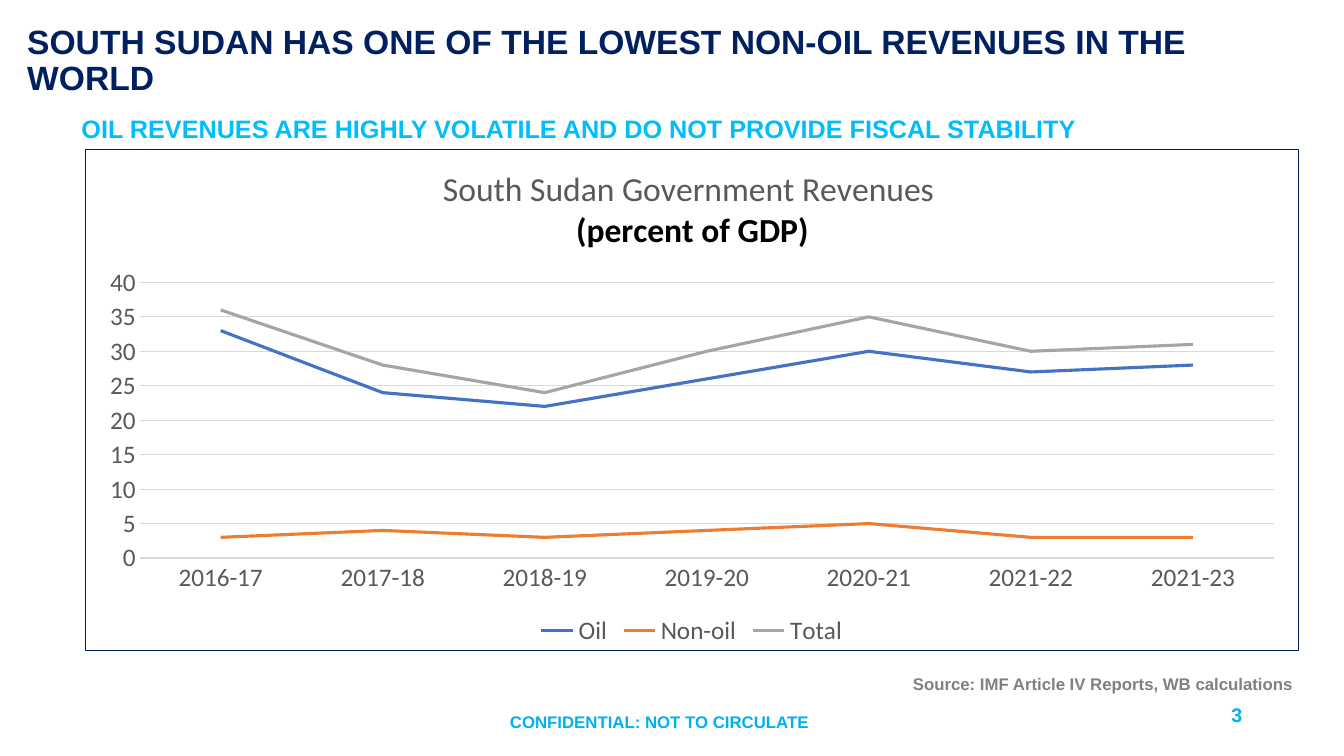
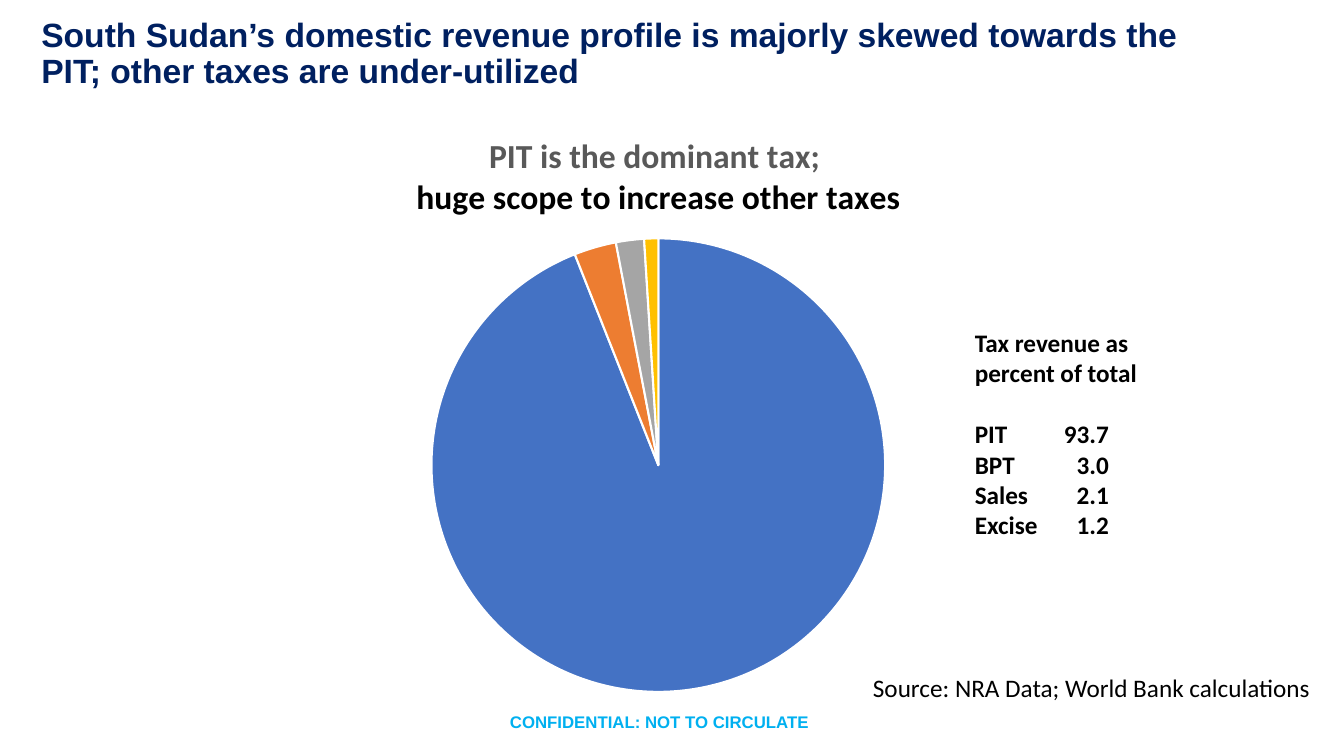
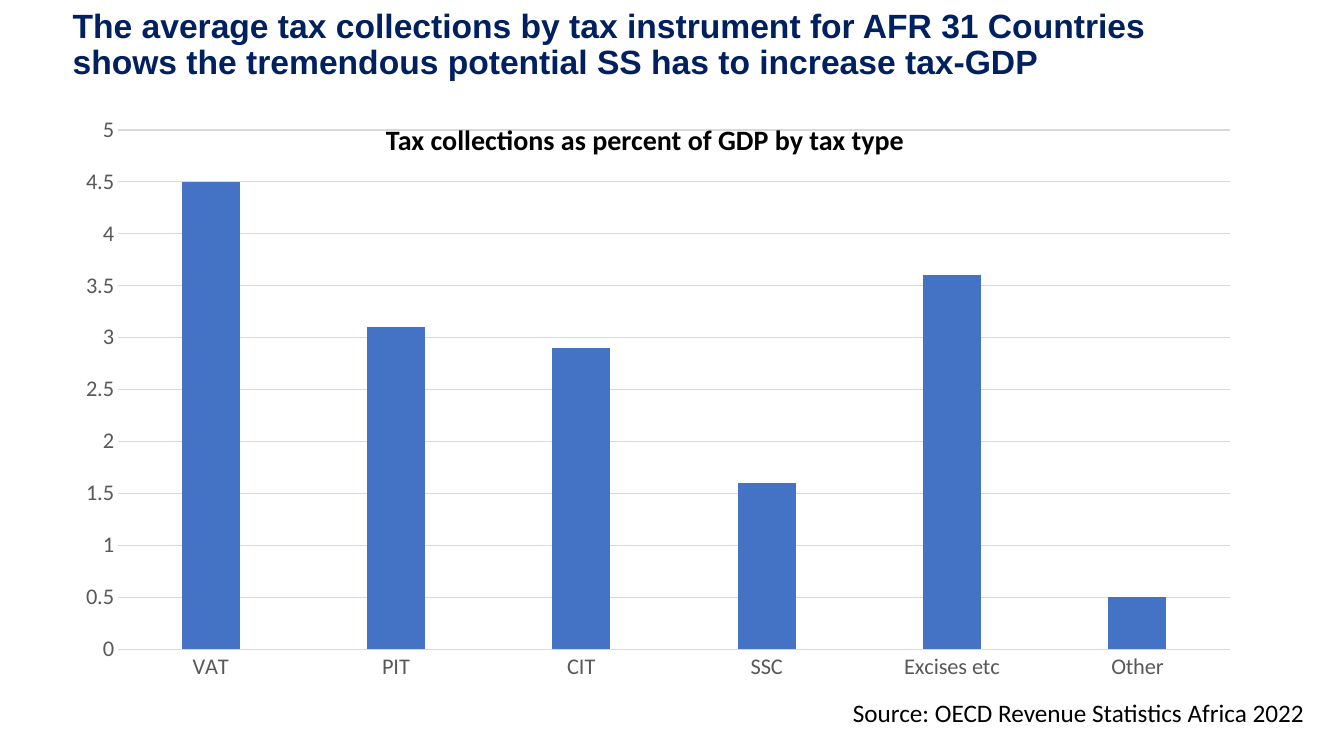
from pptx import Presentation
from pptx.chart.data import CategoryChartData
from pptx.dml.color import RGBColor
from pptx.enum.chart import XL_CHART_TYPE, XL_LEGEND_POSITION, XL_TICK_MARK
from pptx.enum.text import MSO_ANCHOR, MSO_AUTO_SIZE, PP_ALIGN
from pptx.oxml import parse_xml
from pptx.oxml.ns import nsdecls, qn
from pptx.util import Emu, Pt
from lxml.etree import SubElement

# Shared look: 100 px to the inch
EMU_PER_PX = 9144
SLIDE_SIZE = (1333, 750)
TITLE_ONLY = 5
NAVY, SKY, CYAN = "002060", "00BEFA", "00B0F0"
BLACK, WHITE, SOURCE_GREY = "000000", "FFFFFF", "808080"
AXIS_TEXT, GRID = "595959", "D9D9D9"
BLUE, ORANGE, GREY, GOLD = "4472C4", "ED7D31", "A5A5A5", "FFC000"
HEADING_FONT, BODY_FONT = "Arial", "Calibri"


def px(length):
    return Emu(length * EMU_PER_PX)


def rgb(color):
    return RGBColor.from_string(color)


def set_font(font, size, color, name=BODY_FONT, bold=False):
    font.size, font.name, font.bold = Pt(size), name, bold
    font.color.rgb = rgb(color)


# Text
def add_titled_slide(prs, title, box):
    slide = prs.slides.add_slide(prs.slide_layouts[TITLE_ONLY])
    heading = slide.shapes.title
    heading.left, heading.top, heading.width, heading.height = map(px, box)
    frame = heading.text_frame
    frame.text = title
    frame.auto_size = MSO_AUTO_SIZE.NONE
    frame.vertical_anchor = MSO_ANCHOR.MIDDLE
    paragraph = frame.paragraphs[0]
    paragraph.alignment, paragraph.line_spacing = PP_ALIGN.LEFT, 0.9
    set_font(paragraph.font, 24, NAVY, HEADING_FONT, True)
    return slide


def add_text(slide, text, box, size, color=BLACK, name=BODY_FONT, bold=False,
             align=PP_ALIGN.LEFT, spacing=None):
    frame = slide.shapes.add_textbox(*map(px, box)).text_frame
    frame.word_wrap = True
    paragraph = frame.paragraphs[0]
    paragraph.text = text
    paragraph.alignment, paragraph.line_spacing = align, spacing
    set_font(paragraph.font, size, color, name, bold)
    return frame


def add_confidential_footer(slide):
    add_text(slide, "CONFIDENTIAL: NOT TO CIRCULATE", (496, 701, 346, 30),
             12, CYAN, HEADING_FONT, True)


def add_figures(frame, rows, tab, size):
    """Label and right-aligned figure on each line, one line below the heading."""
    for number, (label, figure) in enumerate(rows):
        paragraph = frame.add_paragraph()
        paragraph.text = f"{label}\t{figure}"
        if number == 0:
            paragraph.space_before = Pt(22)
        tabs = SubElement(paragraph._p.get_or_add_pPr(), qn("a:tabLst"))
        SubElement(tabs, qn("a:tab"), pos=str(px(tab)), algn="r")
        set_font(paragraph.font, size, BLACK, bold=True)


# Charts
def set_layout(parent, index, chart_box, left, top, width=None, height=None):
    """Fix a chart part at slide coordinates given in px."""
    old = parent.find(qn("c:layout"))
    if old is not None:
        parent.remove(old)
    layout = parse_xml(f'<c:layout {nsdecls("c")}><c:manualLayout/></c:layout>')
    parent.insert(index, layout)
    x, y, w, h = chart_box
    values = {"xMode": "edge", "yMode": "edge",
              "x": round((left - x) / w, 4), "y": round((top - y) / h, 4)}
    if width:
        values = {"layoutTarget": "inner", **values,
                  "w": round(width / w, 4), "h": round(height / h, 4)}
    for tag, value in values.items():
        SubElement(layout[0], qn(f"c:{tag}"), val=str(value))


def add_chart(slide, kind, box, plot_box, categories, series, border=None):
    data = CategoryChartData()
    data.categories = categories
    for name, values in series.items():
        data.add_series(name, values)
    chart = slide.shapes.add_chart(kind, *map(px, box), data).chart
    set_font(chart.font, 10, BLACK)
    chart.has_title = chart.has_legend = False
    chart.plots[0].vary_by_categories = kind == XL_CHART_TYPE.PIE
    set_layout(chart.element.find(".//" + qn("c:plotArea")), 0, box, *plot_box)
    outline = (f'<a:solidFill><a:srgbClr val="{border}"/></a:solidFill>'
               if border else "<a:noFill/>")
    chart.element.find(qn("c:chart")).addnext(parse_xml(
        f'<c:spPr {nsdecls("c", "a")}><a:noFill/>'
        f'<a:ln w="9525">{outline}</a:ln></c:spPr>'))
    return chart


def add_chart_title(chart, box, corner, lines):
    """Each line is (text, color, bold)."""
    chart.has_title = True
    frame = chart.chart_title.text_frame
    for number, (text, color, bold) in enumerate(lines):
        paragraph = frame.add_paragraph() if number else frame.paragraphs[0]
        paragraph.text = text
        set_font(paragraph.font, 24, color, bold=bold)
    chart.chart_title.include_in_layout = False
    set_layout(chart.element.find(".//" + qn("c:title")), 1, box, *corner)


def style_axes(chart, size, maximum, step):
    for axis in (chart.category_axis, chart.value_axis):
        axis.major_tick_mark = axis.minor_tick_mark = XL_TICK_MARK.NONE
        set_font(axis.tick_labels.font, size, AXIS_TEXT)
    values = chart.value_axis
    values.minimum_scale, values.maximum_scale = 0, maximum
    values.major_unit = step
    values.format.line.fill.background()
    values.has_major_gridlines = True
    for rule in (chart.category_axis.format.line,
                 values.major_gridlines.format.line):
        rule.color.rgb, rule.width = rgb(GRID), Pt(0.75)


# Slides
def build_revenue_slide(prs):
    slide = add_titled_slide(
        prs, "SOUTH SUDAN HAS ONE OF THE LOWEST NON-OIL REVENUES IN THE WORLD",
        (17, 35, 1247, 52))
    add_text(slide, "OIL REVENUES ARE HIGHLY VOLATILE AND DO NOT PROVIDE "
             "FISCAL STABILITY", (71, 111, 1218, 37), 18, SKY, HEADING_FONT,
             True, spacing=0.9)
    add_confidential_footer(slide)
    add_text(slide, "3", (942, 695, 300, 31), 14.1, CYAN, HEADING_FONT, True,
             PP_ALIGN.RIGHT, 0.9)
    add_text(slide, "Source: IMF Article IV Reports, WB calculations",
             (855, 663, 478, 30), 12, SOURCE_GREY, HEADING_FONT, True,
             PP_ALIGN.CENTER)

    box = (84, 148, 1204, 498)
    years = ["2016-17", "2017-18", "2018-19", "2019-20", "2020-21",
             "2021-22", "2021-23"]
    revenues = {"Oil": (33, 24, 22, 26, 30, 27, 28),
                "Non-oil": (3, 4, 3, 4, 5, 3, 3),
                "Total": (36, 28, 24, 30, 35, 30, 31)}
    chart = add_chart(slide, XL_CHART_TYPE.LINE, box, (138, 280, 1126, 274),
                      years, revenues, NAVY)
    add_chart_title(chart, box, (436, 163),
                    [("South Sudan Government Revenues ", AXIS_TEXT, False),
                     ("(percent of GDP)", BLACK, True)])
    style_axes(chart, 18, 40, 5)
    for revenue, color in zip(chart.plots[0].series, (BLUE, ORANGE, GREY)):
        revenue.smooth = False
        revenue.format.line.color.rgb = rgb(color)
        revenue.format.line.width = Pt(2.25)
    chart.has_legend = True
    chart.legend.position = XL_LEGEND_POSITION.BOTTOM
    chart.legend.include_in_layout = False
    set_font(chart.legend.font, 18, AXIS_TEXT)


def build_tax_share_slide(prs):
    slide = add_titled_slide(
        prs, "South Sudan’s domestic revenue profile is majorly skewed towards "
        "the PIT; other taxes are under-utilized", (31, 34, 1182, 41))
    box = (62, 114, 1182, 587)
    chart = add_chart(slide, XL_CHART_TYPE.PIE, box, (428, 236, 450, 451),
                      ["1", "2", "3", "4"], {"Series 1": (94, 3, 2, 1)})
    add_chart_title(chart, box, (410, 131),
                    [("PIT is the dominant tax; ", AXIS_TEXT, True),
                     ("huge scope to increase other taxes", BLACK, True)])
    for number, color in enumerate((BLUE, ORANGE, GREY, GOLD)):
        slice_format = chart.plots[0].series[0].points[number].format
        slice_format.fill.solid()
        slice_format.fill.fore_color.rgb = rgb(color)
        slice_format.line.color.rgb = rgb(WHITE)
        slice_format.line.width = Pt(1.5)

    shares = [("PIT", "93.7"), ("BPT", "3.0"), ("Sales", "2.1"),
              ("Excise", "1.2")]
    figures = add_text(slide, "Tax revenue as percent of total",
                       (957, 320, 256, 222), 18, bold=True)
    add_figures(figures, shares, 133, 18)
    add_text(slide, "Source: NRA Data; World Bank calculations",
             (856, 662, 477, 40), 18)
    add_confidential_footer(slide)


def build_tax_type_slide(prs):
    slide = add_titled_slide(
        prs, "The average tax collections by tax instrument for AFR 31 Countries "
        "shows the tremendous potential SS has to increase tax-GDP",
        (62, 25, 1182, 41))
    chart = add_chart(
        slide, XL_CHART_TYPE.COLUMN_CLUSTERED, (62, 104, 1182, 584),
        (117, 129, 1103, 515),
        ["VAT", "PIT", "CIT", "SSC", "Excises etc", "Other"],
        {"Series 1": (4.5, 3.1, 2.9, 1.6, 3.6, 0.5)})
    style_axes(chart, 16, 5, 0.5)
    columns = chart.plots[0]
    columns.gap_width, columns.overlap = 219, -27
    columns.series[0].format.fill.solid()
    columns.series[0].format.fill.fore_color.rgb = rgb(BLUE)
    add_text(slide, "Source: OECD Revenue Statistics Africa 2022",
             (836, 687, 497, 40), 18)
    add_text(slide, "Tax collections as percent of GDP by tax type",
             (373, 117, 559, 44), 20, bold=True)


def main():
    prs = Presentation()
    prs.slide_width, prs.slide_height = map(px, SLIDE_SIZE)
    build_revenue_slide(prs)
    build_tax_share_slide(prs)
    build_tax_type_slide(prs)
    prs.save("out.pptx")


if __name__ == "__main__":
    main()
